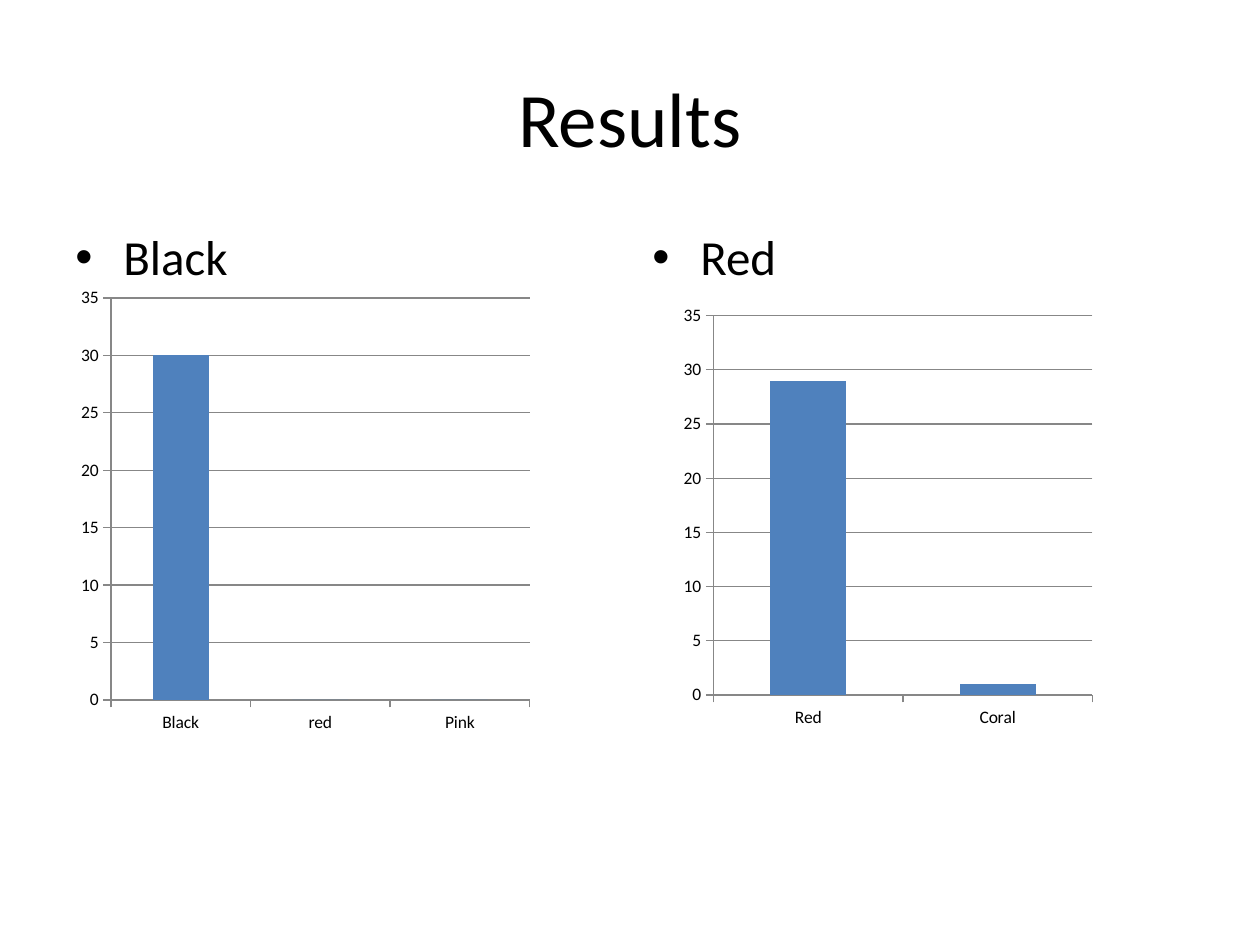
"""Build a results slide that compares two column charts."""
from dataclasses import dataclass

from lxml import etree
from pptx import Presentation
from pptx import util as u
from pptx.chart import data as cd
from pptx.dml.color import RGBColor
from pptx.enum import chart as ch, text
from pptx.oxml import parse_xml
from pptx.oxml.ns import nsdecls, qn


@dataclass(frozen=True)
class Theme:
    font: str = "Calibri"
    ink: RGBColor = RGBColor(0, 0, 0)
    bar: RGBColor = RGBColor(0x4F, 0x81, 0xBD)
    grid: RGBColor = RGBColor(0x87, 0x87, 0x87)
    title: float = 44
    body: float = 28
    label: float = 10


def apply(obj, **fmt):
    for name, value in fmt.items():
        setattr(obj, name, value)


class SlideBuilder:
    def __init__(self, s, theme):
        self.s, self.theme = s, theme

    def style_font(self, font, size):
        apply(font, name=self.theme.font, size=u.Pt(size))
        font.color.rgb = self.theme.ink

    def style_line(self, line):
        line.color.rgb = self.theme.grid
        line.width = u.Pt(0.75)

    def text(self, box, words, size, anchor, align):
        sp = self.s.shapes.add_textbox(*map(u.Inches, box))
        tf = sp.text_frame
        apply(tf, word_wrap=True, auto_size=text.MSO_AUTO_SIZE.NONE, vertical_anchor=anchor)
        p = tf.paragraphs[0]
        p.alignment = align
        r = p.add_run()
        r.text = words
        self.style_font(r.font, size)
        return p

    def title(self, box, words):
        self.text(box, words, self.theme.title, text.MSO_ANCHOR.MIDDLE, text.PP_ALIGN.CENTER)

    def bullet(self, box, words):
        size = self.theme.body
        p = self.text(box, words, size, text.MSO_ANCHOR.TOP, text.PP_ALIGN.LEFT)
        p.space_before = u.Pt(size * 0.2)
        pPr = p._p.get_or_add_pPr()
        indent = u.Inches(0.38)
        pPr.set("marL", str(indent))
        pPr.set("indent", str(-indent))
        etree.SubElement(pPr, qn("a:buFont")).set("typeface", "Arial")
        etree.SubElement(pPr, qn("a:buChar")).set("char", "•")

    def columns(self, box, values, plot):
        data = cd.CategoryChartData()
        data.categories = list(values)
        data.add_series("Series 1", list(values.values()))
        kind = ch.XL_CHART_TYPE.COLUMN_CLUSTERED
        chart = self.s.shapes.add_chart(kind, *map(u.Inches, box), data).chart
        apply(chart, has_legend=False, has_title=False)
        self.style_font(chart.font, self.theme.label)
        apply(chart.plots[0], gap_width=150, vary_by_categories=False)
        fill = chart.plots[0].series[0].format.fill
        fill.solid()
        fill.fore_color.rgb = self.theme.bar
        for axis in (chart.category_axis, chart.value_axis):
            apply(axis, major_tick_mark=ch.XL_TICK_MARK.OUTSIDE,
                  minor_tick_mark=ch.XL_TICK_MARK.NONE)
            self.style_line(axis.format.line)
        apply(chart.value_axis, minimum_scale=0, maximum_scale=35, major_unit=5,
              has_major_gridlines=True)
        self.style_line(chart.value_axis.major_gridlines.format.line)
        self.place_plot(chart, plot)

    def place_plot(self, chart, plot):
        area = chart._chartSpace.find(".//" + qn("c:plotArea"))
        for old in area.findall(qn("c:layout")):
            area.remove(old)
        parts = [("layoutTarget", "inner"), ("xMode", "edge"), ("yMode", "edge")]
        parts += zip("xywh", plot)
        inner = "".join(f'<c:{tag} val="{value}"/>' for tag, value in parts)
        area.insert(0, parse_xml(
            f'<c:layout {nsdecls("c")}><c:manualLayout>{inner}</c:manualLayout></c:layout>'))


def main():
    prs = Presentation()
    apply(prs, slide_width=u.Inches(10), slide_height=u.Inches(7.5))
    s = prs.slides.add_slide(prs.slide_layouts[6])
    page = SlideBuilder(s, Theme())
    page.title((0.5, 0.3, 9, 1.25), "Results")
    panels = [
        ("Black", 0.5, (2.17, 4.42, 3.83), {"Black": 30, "red": 0, "Pink": 0},
         (0.086, 0.051, 0.752, 0.833)),
        ("Red", 5.08, (2.33, 4.25, 3.58), {"Red": 29, "Coral": 1},
         (0.137, 0.049, 0.708, 0.841)),
    ]
    for heading, left, chart_box, values, plot in panels:
        page.bullet((left, 1.75, 4.42, 4.95), heading)
        page.columns((left, *chart_box), values, plot)
    prs.save("out.pptx")


if __name__ == "__main__":
    main()
